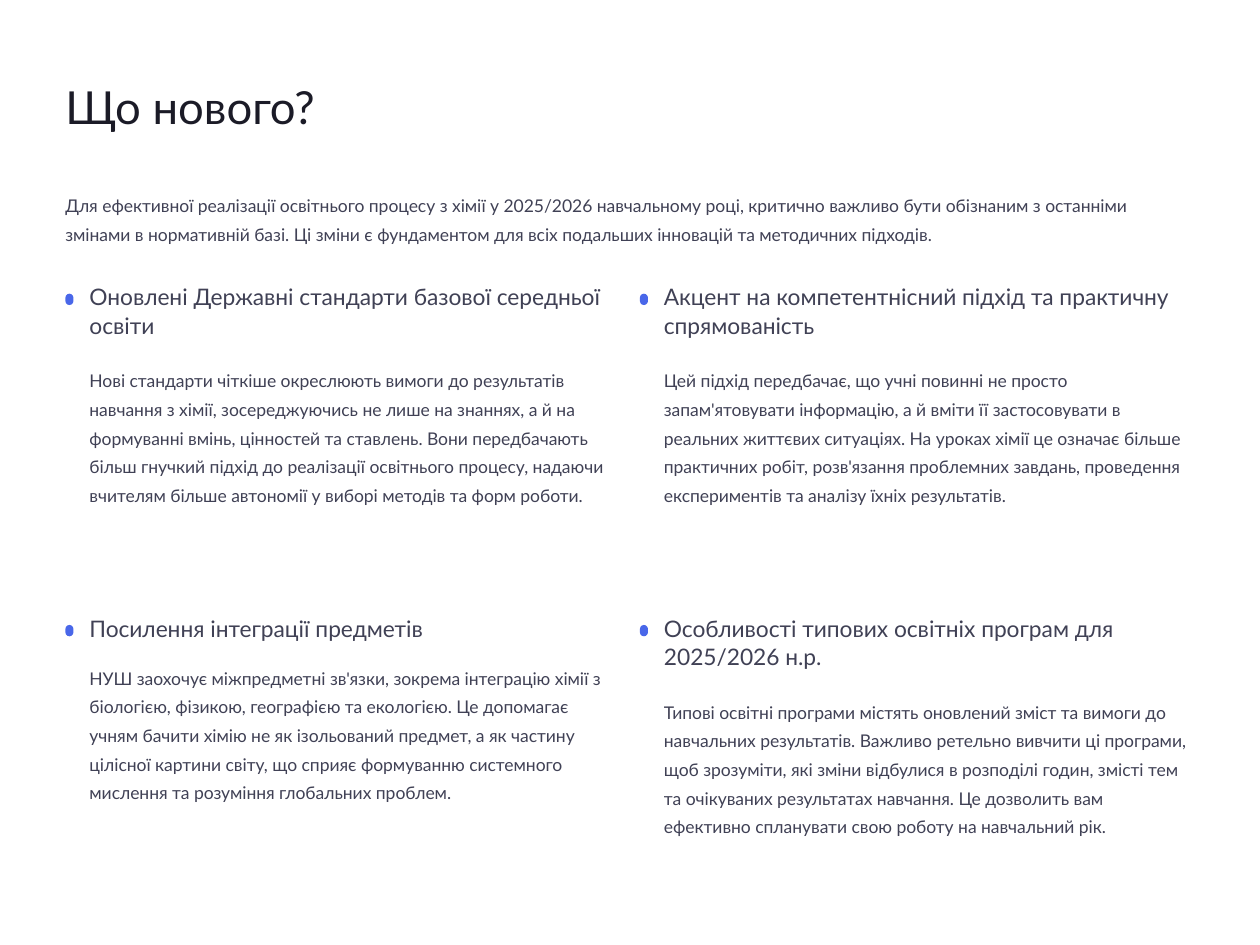
from pptx import Presentation
from pptx.dml.color import RGBColor
from pptx.enum.shapes import MSO_SHAPE
from pptx.enum.text import MSO_ANCHOR, MSO_AUTO_SIZE, PP_ALIGN
from pptx.util import Pt

ROUNDED = MSO_SHAPE.ROUNDED_RECTANGLE
TOP = MSO_ANCHOR.TOP
NO_FIT = MSO_AUTO_SIZE.NONE
LEFT = PP_ALIGN.LEFT

FONT = "Lato"
TITLE_COLOR, TEXT_COLOR, MARKER_COLOR = "1B1B27", "404155", "4967E9"
TITLE_ONLY_LAYOUT = 5

# Grid, in points
MARGIN = 37.4
COLUMN_STEP = 328.3
ROW_TOPS = (161.3, 350.6)
TEXT_INDENT = 13.7
TEXT_WIDTH = 303.1
HEADING_LINE = 19.4
HEADING_GAP = 7.2
BODY_LINE = 19.8

INTRO = ("Для ефективної реалізації освітнього процесу з хімії у 2025/2026 навчальному році, "
         "критично важливо бути обізнаним з останніми змінами в нормативній базі. "
         "Ці зміни є фундаментом для всіх подальших інновацій та методичних підходів.")

# Heading, heading lines, body, body lines; read row by row
TOPICS = [
    ("Оновлені Державні стандарти базової середньої освіти", 2,
     "Нові стандарти чіткіше окреслюють вимоги до результатів навчання з хімії, "
     "зосереджуючись не лише на знаннях, а й на формуванні вмінь, цінностей та ставлень. "
     "Вони передбачають більш гнучкий підхід до реалізації освітнього процесу, "
     "надаючи вчителям більше автономії у виборі методів та форм роботи.", 6),
    ("Акцент на компетентнісний підхід та практичну спрямованість", 2,
     "Цей підхід передбачає, що учні повинні не просто запам'ятовувати інформацію, "
     "а й вміти її застосовувати в реальних життєвих ситуаціях. "
     "На уроках хімії це означає більше практичних робіт, розв'язання проблемних завдань, "
     "проведення експериментів та аналізу їхніх результатів.", 5),
    ("Посилення інтеграції предметів", 1,
     "НУШ заохочує міжпредметні зв'язки, зокрема інтеграцію хімії з біологією, фізикою, "
     "географією та екологією. Це допомагає учням бачити хімію не як ізольований предмет, "
     "а як частину цілісної картини світу, що сприяє формуванню системного мислення "
     "та розуміння глобальних проблем.", 5),
    ("Особливості типових освітніх програм для 2025/2026 н.р.", 2,
     "Типові освітні програми містять оновлений зміст та вимоги до навчальних результатів. "
     "Важливо ретельно вивчити ці програми, щоб зрозуміти, які зміни відбулися "
     "в розподілі годин, змісті тем та очікуваних результатах навчання. "
     "Це дозволить вам ефективно спланувати свою роботу на навчальний рік.", 5),
]


def color(hex_value):
    return RGBColor.from_string(hex_value)


def write_text(shape, text, size, line_spacing, text_color=TEXT_COLOR, wrap=True):
    frame = shape.text_frame
    frame.margin_left = frame.margin_right = frame.margin_top = frame.margin_bottom = 0
    frame.word_wrap = wrap
    frame.auto_size = NO_FIT
    frame.vertical_anchor = TOP
    frame.text = text
    paragraph = frame.paragraphs[0]
    paragraph.alignment = LEFT
    paragraph.line_spacing = Pt(line_spacing)
    paragraph.font.name = FONT
    paragraph.font.size = Pt(size)
    paragraph.font.color.rgb = color(text_color)


def add_title(slide, text):
    title = slide.shapes.title
    title.left, title.top, title.width, title.height = Pt(MARGIN), Pt(43.9), Pt(231.8), Pt(38.9)
    write_text(title, text, 26, 32.2, TITLE_COLOR, wrap=False)


def add_text(slide, left, top, width, height, text, size, line_spacing, wrap=True):
    box = slide.shapes.add_textbox(Pt(left), Pt(top), Pt(width), Pt(height))
    write_text(box, text, size, line_spacing, wrap=wrap)


def add_marker(slide, left, top):
    marker = slide.shapes.add_shape(ROUNDED, Pt(left), Pt(top), Pt(4.6), Pt(6.5))
    marker.adjustments[0] = 0.5
    marker.shadow.inherit = False
    marker.fill.solid()
    marker.fill.fore_color.rgb = color(MARKER_COLOR)
    marker.line.fill.background()


def add_topic(slide, left, top, heading, heading_lines, body, body_lines):
    text_left = left + TEXT_INDENT
    heading_height = heading_lines * HEADING_LINE
    add_marker(slide, left, top + 6.5)
    add_text(slide, text_left, top, TEXT_WIDTH, heading_height, heading, 13, 16.1,
             wrap=heading_lines > 1)
    add_text(slide, text_left, top + heading_height + HEADING_GAP, TEXT_WIDTH,
             body_lines * BODY_LINE, body, 10, 16.4)


def main():
    presentation = Presentation()
    presentation.slide_width, presentation.slide_height = Pt(720), Pt(540)
    slide = presentation.slides.add_slide(presentation.slide_layouts[TITLE_ONLY_LAYOUT])
    slide.background.fill.solid()
    slide.background.fill.fore_color.rgb = color("FFFFFF")

    # Title and introduction
    add_title(slide, "Що нового?")
    add_text(slide, MARGIN, 107.3, 645.8, 39.6, INTRO, 10, 16.4)

    # Two by two grid of topics
    for index, topic in enumerate(TOPICS):
        row, column = divmod(index, 2)
        add_topic(slide, MARGIN + column * COLUMN_STEP, ROW_TOPS[row], *topic)

    presentation.save("out.pptx")


if __name__ == "__main__":
    main()
